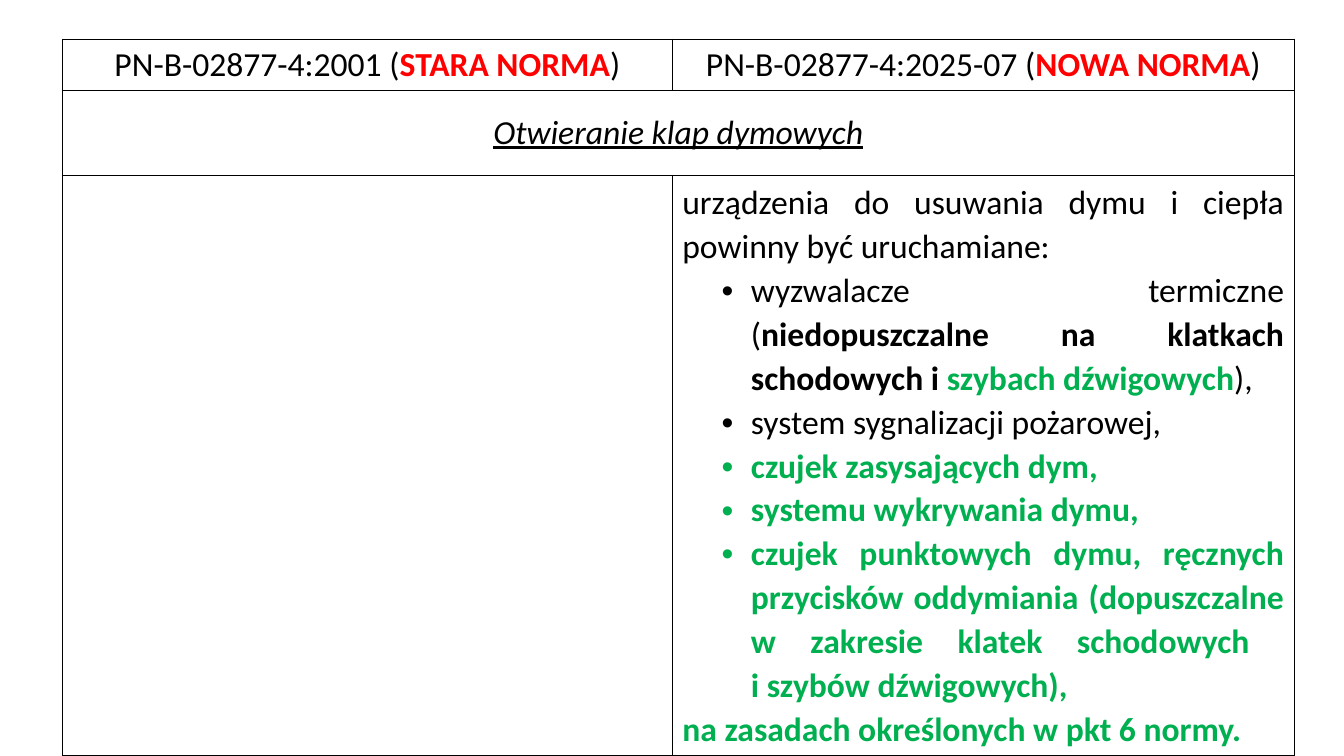
from dataclasses import dataclass
from typing import Any

import lxml.etree
import pptx
import pptx.dml.color
import pptx.enum.text
import pptx.oxml.ns
import pptx.table
import pptx.text.text
import pptx.util

Pt = pptx.util.Pt
qn = pptx.oxml.ns.qn
ALIGN = pptx.enum.text.PP_ALIGN
ANCHOR = pptx.enum.text.MSO_ANCHOR

COLORS = {"black": "000000", "red": "FF0000", "green": "00B050"}
BASE_FONT = {"name": "Calibri", "size": Pt(24), "bold": False, "italic": False, "underline": False}
HEADING = {"alignment": ALIGN.CENTER}
BODY = {"alignment": ALIGN.JUSTIFY, "line_spacing": 1.07}
CLOSING = BODY | {"space_after": Pt(8)}
BOLD = {"bold": True}
TOPIC = {"italic": True, "underline": True}


@dataclass(frozen=True)
class Phrase:
    text: str
    color: str = "black"
    font: dict[str, Any] | None = None


@dataclass(frozen=True)
class Passage:
    phrases: tuple[Phrase, ...]
    layout: dict[str, Any]
    bulleted: bool = False


@dataclass(frozen=True)
class Entry:
    row: int
    column: int
    passages: tuple[Passage, ...]
    anchor: Any = ANCHOR.MIDDLE


def standard(number: str, status: str) -> tuple[Passage, ...]:
    return (Passage((Phrase(f"{number} ("), Phrase(status, "red", BOLD), Phrase(")")), HEADING),)


def bullet(*phrases: Phrase) -> Passage:
    return Passage(phrases, BODY, True)


def added(text: str) -> Phrase:
    return Phrase(text, "green", BOLD)


REQUIREMENTS = (
    Passage((Phrase("urządzenia do usuwania dymu i ciepła powinny być uruchamiane:"),), BODY),
    bullet(
        Phrase("wyzwalacze termiczne ("),
        Phrase("niedopuszczalne na klatkach schodowych i ", font=BOLD),
        added("szybach dźwigowych"),
        Phrase("),"),
    ),
    bullet(Phrase("system sygnalizacji pożarowej,")),
    bullet(added("czujek zasysających dym,")),
    bullet(added("systemu wykrywania dymu,")),
    bullet(added("czujek punktowych dymu, ręcznych przycisków oddymiania "
                 "(dopuszczalne w zakresie klatek schodowych \ni szybów dźwigowych),")),
    Passage((added("na zasadach określonych w pkt 6 normy. "),), CLOSING),
)

ENTRIES = (
    Entry(0, 0, standard("PN-B-02877-4:2001", "STARA NORMA")),
    Entry(0, 1, standard("PN-B-02877-4:2025-07", "NOWA NORMA")),
    Entry(1, 0, (Passage((Phrase("Otwieranie klap dymowych", font=TOPIC),), HEADING),)),
    Entry(2, 1, REQUIREMENTS, ANCHOR.TOP),
)

COLUMN_WIDTHS = (435.6, 444.2)
ROW_HEIGHTS = (35.3, 60.5, 378)


def apply(target: Any, values: dict[str, Any]) -> None:
    for attribute, value in values.items():
        setattr(target, attribute, value)


def outline(cell: pptx.table._Cell) -> None:
    properties = cell._tc.get_or_add_tcPr()
    for side in ("lnL", "lnR", "lnT", "lnB"):
        border = lxml.etree.SubElement(properties, qn(f"a:{side}"), w=str(Pt(1)))
        fill = lxml.etree.SubElement(border, qn("a:solidFill"))
        lxml.etree.SubElement(fill, qn("a:srgbClr"), val=COLORS["black"])
    cell.fill.background()


def add_bullet(paragraph: pptx.text.text._Paragraph) -> None:
    properties = paragraph._p.get_or_add_pPr()
    properties.set("marL", str(Pt(49)))
    properties.set("indent", str(-Pt(20.9)))
    lxml.etree.SubElement(properties, qn("a:buFont"), typeface="Arial")
    lxml.etree.SubElement(properties, qn("a:buChar"), char="•")


def write_phrase(paragraph: pptx.text.text._Paragraph, phrase: Phrase) -> None:
    for index, line in enumerate(phrase.text.split("\n")):
        if index:
            paragraph.add_line_break()
        run = paragraph.add_run()
        run.text = line
        apply(run.font, BASE_FONT | (phrase.font or {}))
        run.font.color.rgb = pptx.dml.color.RGBColor.from_string(COLORS[phrase.color])


def write_entry(comparison: pptx.table.Table, entry: Entry) -> None:
    cell = comparison.cell(entry.row, entry.column)
    cell.vertical_anchor = entry.anchor
    for index, passage in enumerate(entry.passages):
        frame = cell.text_frame
        paragraph = frame.add_paragraph() if index else frame.paragraphs[0]
        apply(paragraph, passage.layout)
        if passage.bulleted:
            add_bullet(paragraph)
        for phrase in passage.phrases:
            write_phrase(paragraph, phrase)


def main() -> None:
    presentation = pptx.Presentation()
    apply(presentation, {"slide_width": Pt(960), "slide_height": Pt(540)})
    slide = presentation.slides.add_slide(presentation.slide_layouts[6])
    comparison = slide.shapes.add_table(
        len(ROW_HEIGHTS), len(COLUMN_WIDTHS), Pt(44.6), Pt(28.1),
        Pt(sum(COLUMN_WIDTHS)), Pt(sum(ROW_HEIGHTS)),
    ).table
    apply(comparison, {"first_row": False, "horz_banding": False})
    for column, width in zip(comparison.columns, COLUMN_WIDTHS):
        column.width = Pt(width)
    for row, height in zip(comparison.rows, ROW_HEIGHTS):
        row.height = Pt(height)
    for cell in comparison.iter_cells():
        outline(cell)
    comparison.cell(1, 0).merge(comparison.cell(1, 1))
    for entry in ENTRIES:
        write_entry(comparison, entry)
    presentation.save("out.pptx")


if __name__ == "__main__":
    main()
